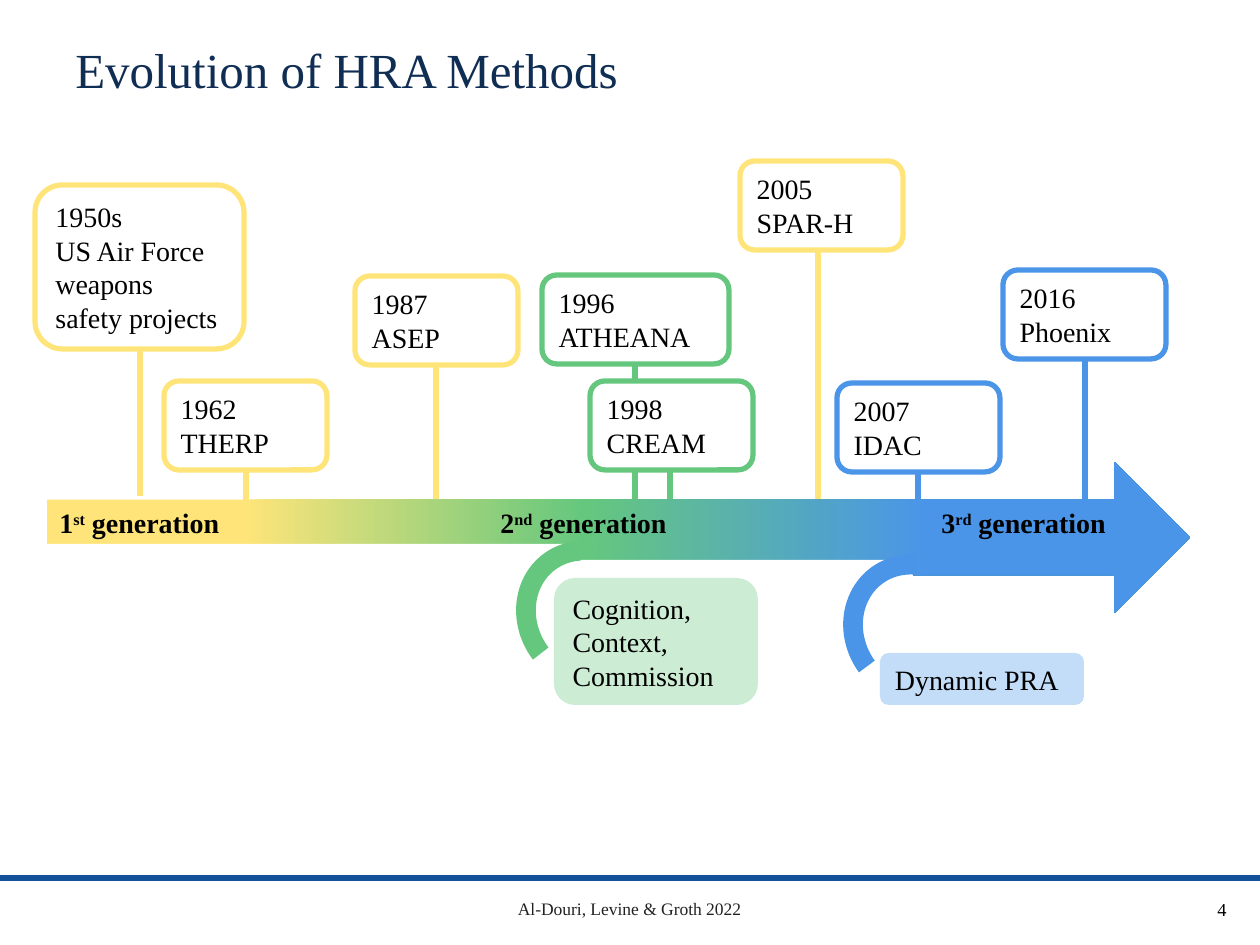
import copy

import pptx
import pptx.dml.color
import pptx.enum.shapes
import pptx.enum.text
import pptx.oxml.ns
import pptx.oxml.xmlchemy
import pptx.util
from lxml import etree

SHAPES = pptx.enum.shapes.MSO_SHAPE
ALIGN = pptx.enum.text.PP_ALIGN
ANCHOR = pptx.enum.text.MSO_ANCHOR
qn = pptx.oxml.ns.qn

FONT = "Times New Roman"
YELLOW, GREEN, BLUE = "FFE579", "65C77E", "4A95E8"
WHITE, BLACK = "FFFFFF", "000000"

EVENTS = [
    (["2016", "Phoenix"], (1003, 270, 163, 89), BLUE, 1085, 519),
    (["2007", "IDAC"], (837, 383, 163, 89), BLUE, 918, 519),
    (["1996", "ATHEANA"], (542, 275, 187, 89), GREEN, 635, 515),
    (["1998", "CREAM"], (590, 381, 163, 89), GREEN, 670, 519),
    (["2005", "SPAR-H"], (740, 161, 163, 89), YELLOW, 818, 515),
    (["1950s", "US Air Force weapons safety projects"],
     (35, 185, 209, 164), YELLOW, 140, 496),
    (["1987", "ASEP"], (355, 276, 163, 89), YELLOW, 436, 518),
    (["1962", "THERP"], (164, 381, 163, 89), YELLOW, 246, 515),
]
GENERATIONS = [("1", "st"), ("2", "nd"), ("3", "rd")]
GENERATION_STEP = 441


def px(value):
    return pptx.util.Emu(round(value * 914400 / 126))


def rgb(color):
    return pptx.dml.color.RGBColor.from_string(color)


def style(paragraph, size, color=BLACK, bold=False, align=ALIGN.LEFT):
    paragraph.alignment = align
    paragraph.font.name = FONT
    paragraph.font.size = pptx.util.Pt(size)
    paragraph.font.color.rgb = rgb(color)
    paragraph.font.bold = bold


def write(shape, lines, size=16, color=BLACK, align=ALIGN.LEFT, anchor=ANCHOR.MIDDLE):
    frame = shape.text_frame
    frame.word_wrap = True
    frame.vertical_anchor = anchor
    frame.text = "\n".join(lines)
    for paragraph in frame.paragraphs:
        style(paragraph, size, color, align=align)
    return frame


def add_text(slide, box, text, **options):
    return write(slide.shapes.add_textbox(*map(px, box)), [text], **options)


def add_shape(slide, kind, box, fill=None, line=None):
    shape = slide.shapes.add_shape(kind, *map(px, box))
    shape.shadow.inherit = False
    if fill:
        shape.fill.solid()
        shape.fill.fore_color.rgb = rgb(fill)
    if line:
        shape.line.color.rgb = rgb(line)
        shape.line.width = pptx.util.Pt(3)
    else:
        shape.line.fill.background()
    return shape


def add_stem(slide, x, top, bottom, color):
    stem = slide.shapes.add_connector(
        pptx.enum.shapes.MSO_CONNECTOR.STRAIGHT, px(x), px(top), px(x), px(bottom))
    stem.line.color.rgb = rgb(color)
    stem.line.width = pptx.util.Pt(3)
    etree.SubElement(stem._element.spPr, qn("a:effectLst"))


def add_arc(slide, box, color, rotation, start):
    arc = add_shape(slide, SHAPES.BLOCK_ARC, box, color)
    for index, value in enumerate((start, 2.388, 0.139)):
        arc.adjustments[index] = value
    arc.rotation = rotation
    arc._element.spPr.find(qn("a:xfrm")).set("flipV", "1")


def fill_gradient(shape, stops):
    shape.fill.gradient()
    shape.fill.gradient_angle = 0
    stop_list = shape._element.spPr.find(".//" + qn("a:gsLst"))
    while len(stop_list) < len(stops):
        stop_list.append(copy.deepcopy(stop_list[0]))
    for stop, (position, color) in zip(shape.fill.gradient_stops, stops):
        stop.position = position
        stop.color.rgb = rgb(color)


def add_timeline(slide):
    arrow = add_shape(slide, SHAPES.RIGHT_ARROW, (47, 462, 1143, 151))
    fill_gradient(arrow, [(0.17, YELLOW), (0.47, GREEN), (0.77, BLUE)])
    frame = arrow.text_frame
    frame.word_wrap = True
    frame.vertical_anchor = ANCHOR.TOP
    paragraph = frame.paragraphs[0]
    tabs = etree.SubElement(paragraph._p.get_or_add_pPr(), qn("a:tabLst"))
    for index, (number, suffix) in enumerate(GENERATIONS):
        if index:
            position = str(px(index * GENERATION_STEP))
            etree.SubElement(tabs, qn("a:tab"), pos=position, algn="l")
        paragraph.add_run().text = ("\t" if index else "") + number
        ordinal = paragraph.add_run()
        ordinal.text = suffix
        ordinal._r.get_or_add_rPr().set("baseline", "30000")
        paragraph.add_run().text = " generation"
    style(paragraph, 16, bold=True)


def add_events(slide):
    for lines, box, color, x, bottom in EVENTS:
        write(add_shape(slide, SHAPES.ROUNDED_RECTANGLE, box, WHITE, color), lines)


def add_themes(slide):
    add_shape(slide, SHAPES.RECTANGLE, (47, 544, 534, 60), WHITE)
    add_arc(slide, (518, 539, 142, 154), GREEN, 146.1, 139.859)
    add_shape(slide, SHAPES.RECTANGLE, (581, 560, 332, 53), WHITE)
    add_arc(slide, (845, 553, 142, 154), BLUE, 147.4, 142.119)
    for lines, box, fill in [
        (["Cognition,", "Context,", "Commission"], (554, 578, 204, 127), "CCECD4"),
        (["Dynamic PRA"], (880, 653, 204, 52), "C3DCF7"),
    ]:
        write(add_shape(slide, SHAPES.ROUNDED_RECTANGLE, box, fill), lines)


def main():
    presentation = pptx.Presentation()
    presentation.slide_width = px(1260)
    presentation.slide_height = px(945)
    slide = presentation.slides.add_slide(presentation.slide_layouts[6])

    add_shape(slide, SHAPES.RECTANGLE, (0, 875, 1260, 6), "135297")
    title = add_text(slide, (63, 6, 1062, 136), "Evolution of HRA Methods",
                     size=28, color="102E54")
    title.paragraphs[0].line_spacing = 0.85
    for lines, box, color, x, bottom in EVENTS:
        add_stem(slide, x, box[1] + box[3], bottom, color)
    add_timeline(slide)
    add_events(slide)
    add_themes(slide)
    add_text(slide, (1155, 892, 84, 42), "4", size=10.5,
             align=ALIGN.RIGHT, anchor=ANCHOR.TOP)
    add_text(slide, (462, 892, 335, 34), "Al-Douri, Levine & Groth 2022", size=10,
             color="222222", align=ALIGN.CENTER, anchor=ANCHOR.TOP)
    presentation.save("out.pptx")


if __name__ == "__main__":
    main()
